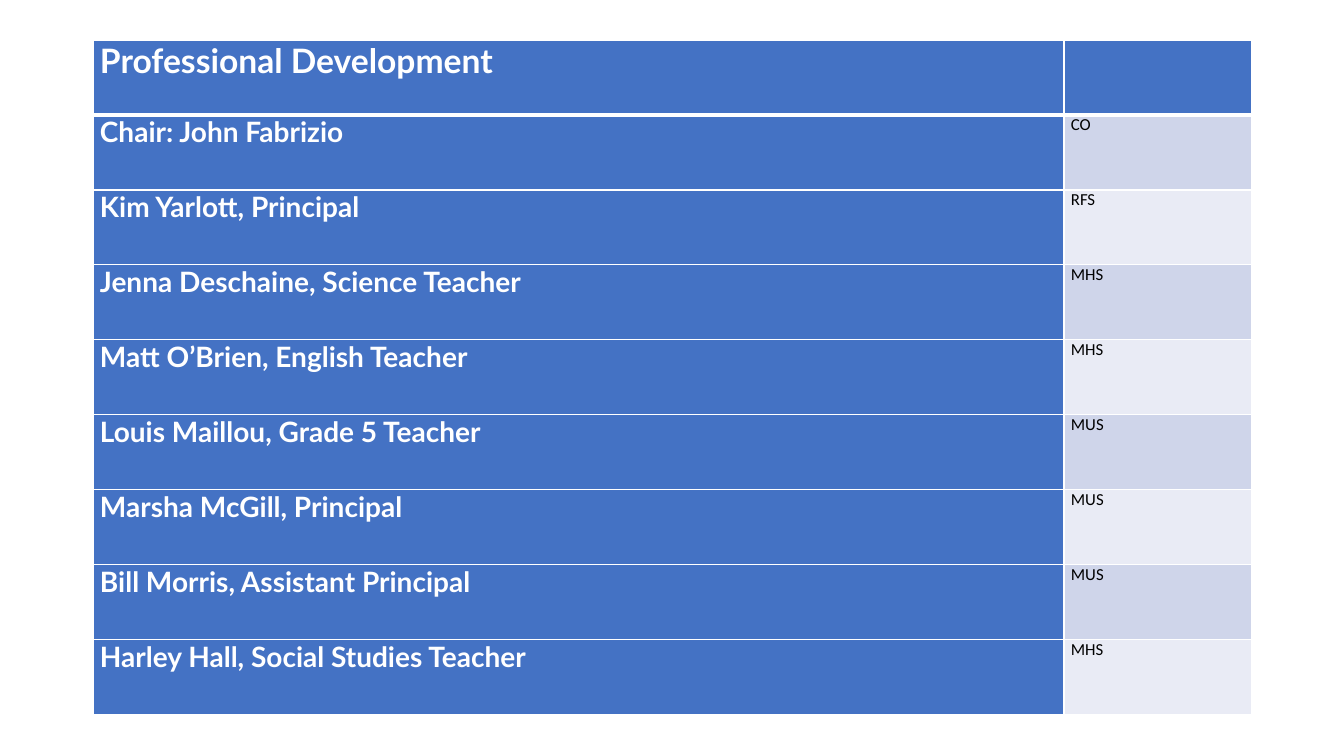
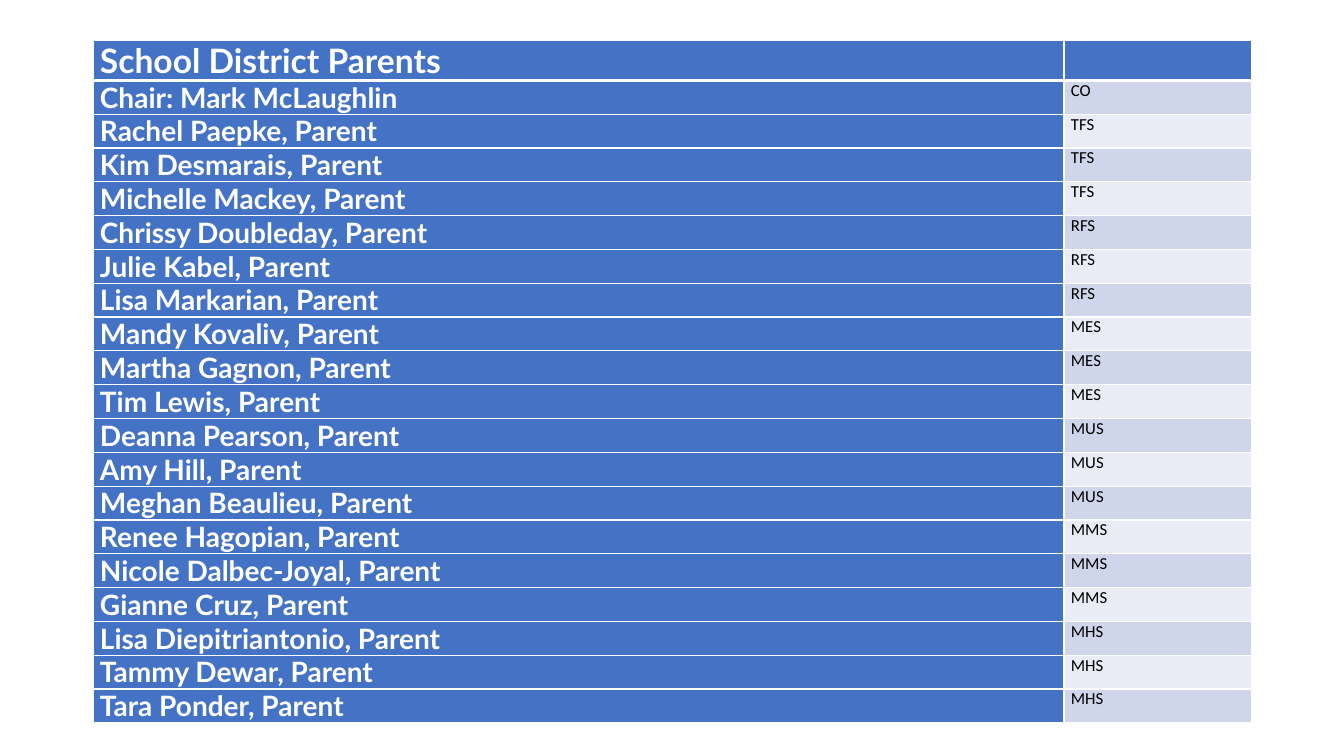
from lxml import etree
from pptx import Presentation
from pptx.dml.color import RGBColor
from pptx.oxml.ns import qn
from pptx.util import Emu, Pt

EMU_PER_PX = 914400 / 100.8
BLANK_LAYOUT = 6

SLIDE_SIZE = (1344, 756)
ROSTER_LEFT, ROSTER_TOP = 93, 40
COLUMN_WIDTHS = (971, 188)
CELL_INSET = 7

PROFESSIONAL_DEVELOPMENT = [
    ("Chair: John Fabrizio", "CO"),
    ("Kim Yarlott, Principal", "RFS"),
    ("Jenna Deschaine, Science Teacher", "MHS"),
    ("Matt O’Brien, English Teacher", "MHS"),
    ("Louis Maillou, Grade 5 Teacher", "MUS"),
    ("Marsha McGill, Principal", "MUS"),
    ("Bill Morris, Assistant Principal", "MUS"),
    ("Harley Hall, Social Studies Teacher", "MHS"),
]

PARENTS_BY_SCHOOL = {
    "TFS": ("Rachel Paepke", "Kim Desmarais", "Michelle Mackey"),
    "RFS": ("Chrissy Doubleday", "Julie Kabel", "Lisa Markarian"),
    "MES": ("Mandy Kovaliv", "Martha Gagnon", "Tim Lewis"),
    "MUS": ("Deanna Pearson", "Amy Hill", "Meghan Beaulieu"),
    "MMS": ("Renee Hagopian", "Nicole Dalbec-Joyal", "Gianne Cruz"),
    "MHS": ("Lisa Diepitriantonio", "Tammy Dewar", "Tara Ponder"),
}
SCHOOL_DISTRICT_PARENTS = [("Chair: Mark McLaughlin", "CO")] + [
    (f"{parent}, Parent", school)
    for school, parents in PARENTS_BY_SCHOOL.items()
    for parent in parents
]


def px(length):
    return Emu(round(length * EMU_PER_PX))


def rgb(hex_color):
    return RGBColor.from_string(hex_color)


def write(frame, text, *, size, font, color, bold=False):
    run = frame.paragraphs[0].add_run()
    run.text = text
    run.font.size = Pt(size)
    run.font.name = font
    run.font.bold = bold
    run.font.color.rgb = rgb(color)


class Deck:
    BLUE, WHITE, BLACK = "4472C4", "FFFFFF", "000000"
    BANDS = ("CFD5EA", "E9EBF5")
    HEADING = {"size": 24, "font": "Lato", "color": WHITE, "bold": True}
    MEMBER = {**HEADING, "size": 20}
    SCHOOL = {"size": 12, "font": "Calibri", "color": BLACK}
    RULE, HEADER_RULE = 1, 3

    def __init__(self):
        self.presentation = Presentation()
        self.presentation.slide_width = px(SLIDE_SIZE[0])
        self.presentation.slide_height = px(SLIDE_SIZE[1])
        self.slide = None

    def add_slide(self):
        layout = self.presentation.slide_layouts[BLANK_LAYOUT]
        self.slide = self.presentation.slides.add_slide(layout)

    def borders(self, cell, top, bottom):
        """Draw the white rules of a cell; top and bottom are widths in points."""
        properties = cell._tc.get_or_add_tcPr()
        widths = {"L": self.RULE, "R": self.RULE, "T": top, "B": bottom}
        for side, width in widths.items():
            line = etree.SubElement(properties, qn(f"a:ln{side}"), w=str(Pt(width)))
            fill = etree.SubElement(line, qn("a:solidFill"))
            etree.SubElement(fill, qn("a:srgbClr"), val=self.WHITE)

    def cell(self, cell, text, style, fill, top, bottom):
        cell.margin_left = cell.margin_right = px(CELL_INSET)
        cell.margin_top = cell.margin_bottom = 0
        self.borders(cell, top, bottom)
        cell.fill.solid()
        cell.fill.fore_color.rgb = rgb(fill)
        if text:
            write(cell.text_frame, text, **style)

    def roster(self, heading, members, row_height):
        """Add a table of committee members; rows grow to fit their text."""
        rows = [(heading, "")] + members
        table = self.slide.shapes.add_table(
            len(rows), len(COLUMN_WIDTHS), px(ROSTER_LEFT), px(ROSTER_TOP),
            px(sum(COLUMN_WIDTHS)), px(row_height * len(rows))).table
        for column, width in zip(table.columns, COLUMN_WIDTHS):
            column.width = px(width)
        for index, (member, school) in enumerate(rows):
            table.rows[index].height = px(row_height)
            is_header = index == 0
            band = self.BLUE if is_header else self.BANDS[(index - 1) % 2]
            top = self.HEADER_RULE if index == 1 else self.RULE
            bottom = self.HEADER_RULE if is_header else self.RULE
            member_style = self.HEADING if is_header else self.MEMBER
            self.cell(table.cell(index, 0), member, member_style, self.BLUE, top, bottom)
            self.cell(table.cell(index, 1), school, self.SCHOOL, band, top, bottom)

    def save(self):
        self.presentation.save("out.pptx")


def main():
    deck = Deck()
    for heading, members, row_height in (
        ("Professional Development", PROFESSIONAL_DEVELOPMENT, 75),
        ("School District Parents", SCHOOL_DISTRICT_PARENTS, 30),
    ):
        deck.add_slide()
        deck.roster(heading, members, row_height)
    deck.save()


if __name__ == "__main__":
    main()
